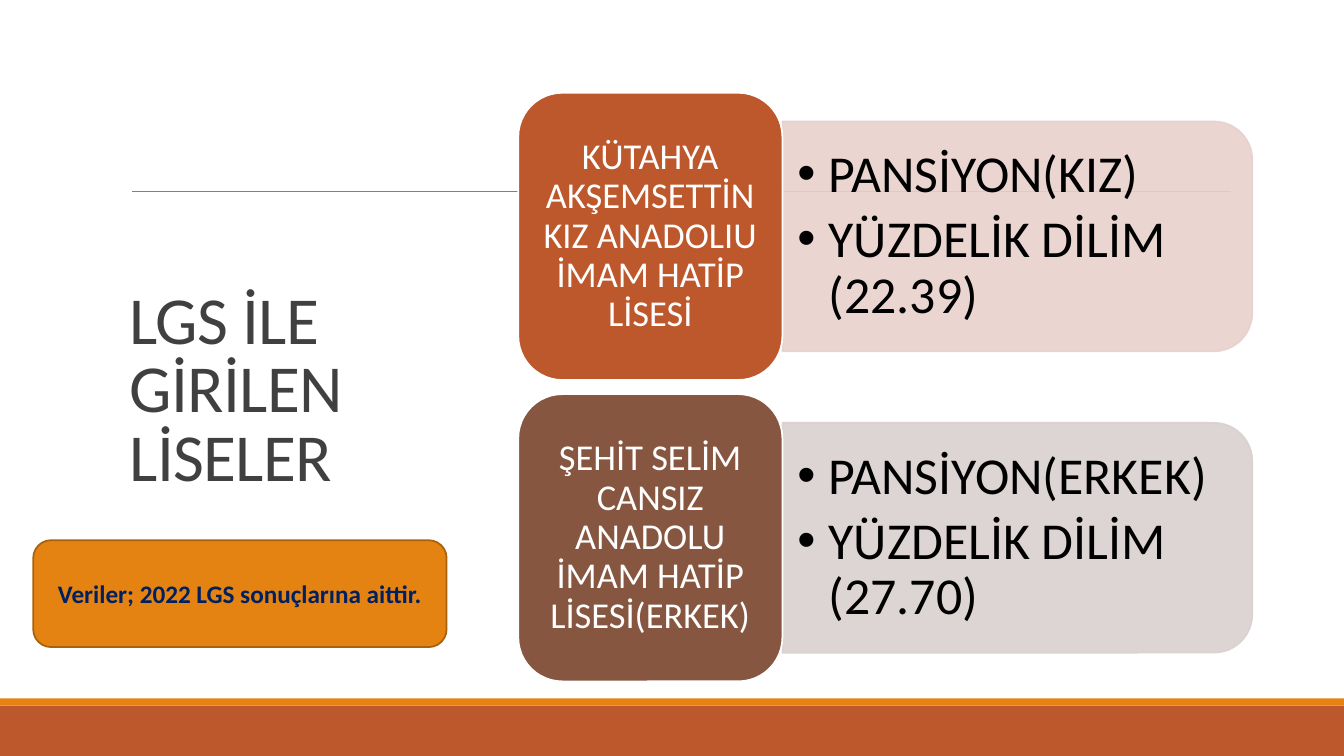
from lxml.etree import SubElement
from pptx import Presentation
from pptx.dml.color import RGBColor
from pptx.enum.shapes import MSO_CONNECTOR, MSO_SHAPE
from pptx.enum.text import MSO_ANCHOR, PP_ALIGN
from pptx.oxml.ns import qn
from pptx.util import Inches, Pt

COLORS = {
    "rust": "BD582C", "orange": "E48312", "orange_edge": "A9610D",
    "brown": "865640", "pink": "E8D1CD", "taupe": "D9D1CF",
    "rule": "808080", "title": "404040", "navy": "002060",
    "white": "FFFFFF", "black": "000000",
}
SCHOOLS = [
    ("KÜTAHYA AKŞEMSETTİN KIZ ANADOLIU İMAM HATİP LİSESİ",
     ["PANSİYON(KIZ)", "YÜZDELİK DİLİM (22.39)"], "rust", "pink"),
    ("ŞEHİT SELİM CANSIZ ANADOLU İMAM HATİP LİSESİ(ERKEK)",
     ["PANSİYON(ERKEK)", "YÜZDELİK DİLİM (27.70)"], "brown", "taupe"),
]


def rgb(name):
    """Return the palette colour of that name."""
    return RGBColor.from_string(COLORS[name])


def add_block(slide, preset, box, fill, edge=None, alpha=None):
    """Add a flat preset shape in box, optionally outlined and translucent."""
    block = slide.shapes.add_shape(preset, *map(Inches, box))
    block.shadow.inherit = False
    block.fill.solid()
    block.fill.fore_color.rgb = rgb(fill)
    if edge:
        block.line.color.rgb = rgb(edge)
        block.line.width = Pt(1.25)
    else:
        block.line.fill.background()
    if alpha:
        for color in block._element.spPr.iter(qn("a:srgbClr")):
            SubElement(color, qn("a:alpha"), val=str(alpha * 1000))
    return block


def write(holder, lines, size, color, align=PP_ALIGN.LEFT, anchor=MSO_ANCHOR.MIDDLE,
          spacing=1.0, insets=(0.1, 0.05), bold=False):
    """Fill a shape with paragraphs of one style and return its text frame."""
    frame = holder.text_frame
    frame.word_wrap = True
    frame.vertical_anchor = anchor
    frame.margin_left = frame.margin_right = Inches(insets[0])
    frame.margin_top = frame.margin_bottom = Inches(insets[1])
    frame.text = "\n".join(lines)
    for paragraph in frame.paragraphs:
        paragraph.alignment = align
        paragraph.line_spacing = spacing
        for run in paragraph.runs:
            run.font.name = "Calibri"
            run.font.size = Pt(size)
            run.font.bold = bold
            run.font.color.rgb = rgb(color)
    return frame


def add_backdrop(slide, width, height):
    """Draw the footer bands and the thin rule on a page of the given size."""
    add_block(slide, MSO_SHAPE.RECTANGLE, (0, height - 0.5, width, 0.5), "rust")
    add_block(slide, MSO_SHAPE.RECTANGLE, (0, height - 0.57, width, 0.07), "orange")
    rule = slide.shapes.add_connector(
        MSO_CONNECTOR.STRAIGHT, Inches(1.31), Inches(1.9), Inches(12.21), Inches(1.9))
    rule.line.color.rgb = rgb("rule")
    rule.line.width = Pt(0.5)
    SubElement(rule._element.spPr, qn("a:effectLst"))


def add_title(slide, box):
    """Write the slide title at the bottom of box."""
    title = slide.shapes.add_textbox(*map(Inches, box))
    frame = write(title, ["LGS İLE GİRİLEN LİSELER"], 48, "title",
                  anchor=MSO_ANCHOR.BOTTOM, spacing=0.85)
    frame.paragraphs[0].runs[0].font._element.set("spc", "-50")


def add_facts(slide, facts, tint, box):
    """Draw the tinted panel rounded on its right side, with bulleted facts."""
    left, top, width, height = box
    turned = (left + (width - height) / 2, top + (height - width) / 2, height, width)
    panel = add_block(slide, MSO_SHAPE.ROUND_2_SAME_RECTANGLE, turned, tint, tint, 90)
    panel.rotation = 90
    words = slide.shapes.add_textbox(
        Inches(left), Inches(top + 0.11), Inches(width - 0.12), Inches(height - 0.22))
    frame = write(words, facts, 37, "black", spacing=0.9, insets=(0.15, 0.08))
    frame.paragraphs[0].space_after = Pt(6.5)
    for paragraph in frame.paragraphs:
        properties = paragraph._p.get_or_add_pPr()
        properties.set("marL", str(Inches(0.31)))
        properties.set("indent", str(-Inches(0.31)))
        SubElement(properties, qn("a:buFont"), typeface="Arial")
        SubElement(properties, qn("a:buChar"), char="•")


def add_school(slide, school, box):
    """Draw one school: its name card and the facts panel beside it."""
    name, facts, shade, tint = school
    left, top, width, height = box
    card_width = 2.62
    add_facts(slide, facts, tint,
              (left + card_width, top + height / 10, width - card_width, height * 0.8))
    card = add_block(slide, MSO_SHAPE.ROUNDED_RECTANGLE,
                     (left, top, card_width, height), shade, "white")
    write(card, [name], 26, "white", PP_ALIGN.CENTER, spacing=0.9, insets=(0.11, 0.05))


def add_note(slide, box):
    """Draw the note on the source of the data."""
    note = add_block(slide, MSO_SHAPE.ROUNDED_RECTANGLE, box, "orange", "orange_edge")
    write(note, ["Veriler; 2022 LGS sonuçlarına aittir."], 18, "navy",
          PP_ALIGN.CENTER, bold=True)


def main():
    """Build the slide and save it."""
    deck = Presentation()
    deck.slide_width, deck.slide_height = Inches(13.33), Inches(7.5)
    slide = deck.slides.add_slide(deck.slide_layouts[6])
    add_backdrop(slide, 13.33, 7.5)
    add_title(slide, (1.19, 2.72, 3.82, 2.24))
    for row, school in enumerate(SCHOOLS):
        add_school(slide, school, (5.14, 0.92 + row * 2.99, 7.28, 2.85))
    add_note(slide, (0.33, 5.36, 4.1, 1.06))
    deck.save("out.pptx")


if __name__ == "__main__":
    main()
